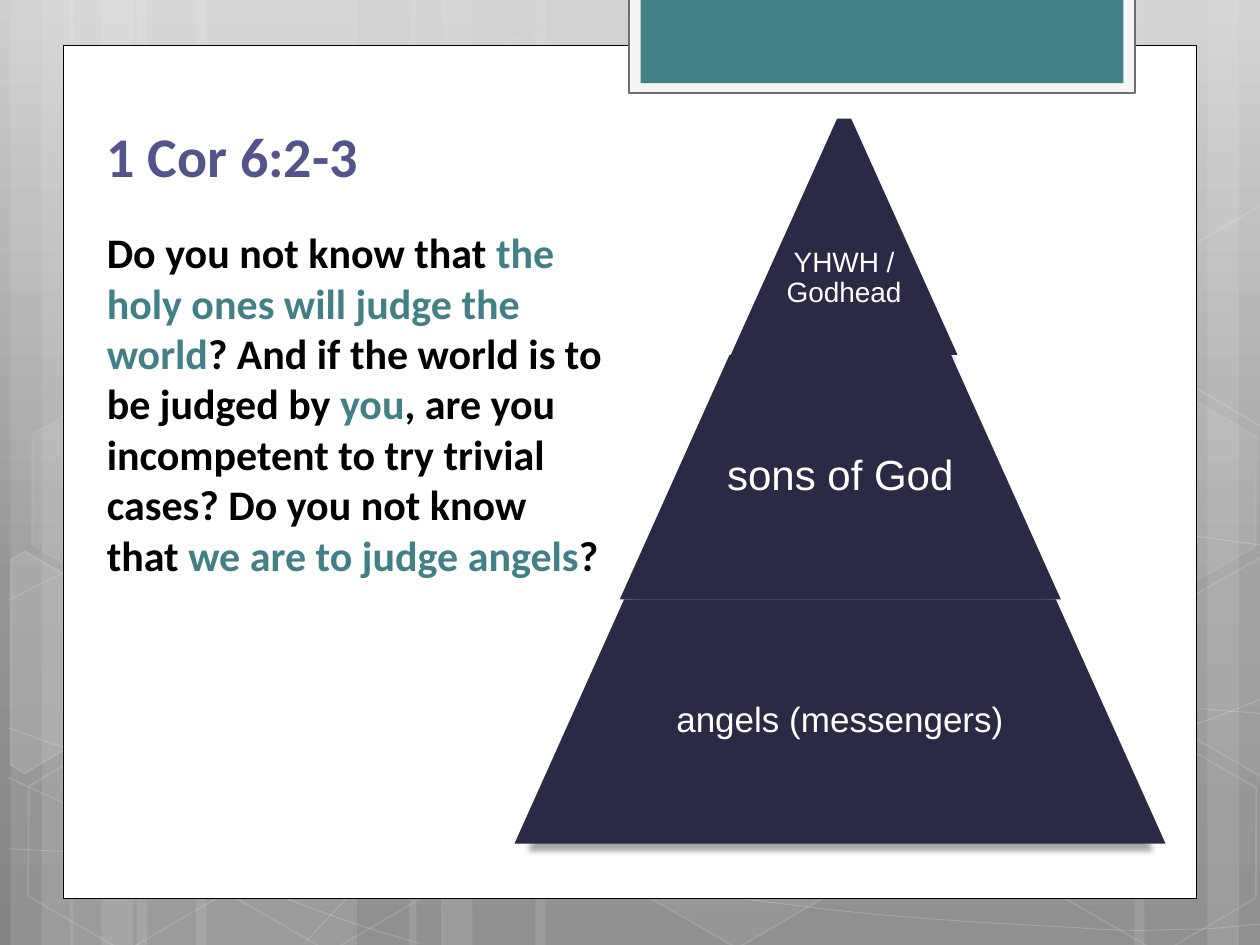
from math import cos, radians, sin

from lxml import etree
from pptx import Presentation
from pptx.dml.color import RGBColor
from pptx.enum.shapes import MSO_SHAPE
from pptx.enum.text import MSO_ANCHOR, MSO_AUTO_SIZE, PP_ALIGN
from pptx.oxml.ns import qn
from pptx.util import Pt

RECTANGLE, HEXAGON, TRAPEZOID = MSO_SHAPE.RECTANGLE, MSO_SHAPE.HEXAGON, MSO_SHAPE.TRAPEZOID
TOP, MIDDLE = MSO_ANCHOR.TOP, MSO_ANCHOR.MIDDLE
LEFT, CENTER = PP_ALIGN.LEFT, PP_ALIGN.CENTER
NO_AUTOFIT = MSO_AUTO_SIZE.NONE

WIDTH, HEIGHT = 720, 540
HEXAGON_TURN = 30
THEME = {
    "text_font": "Calibri", "tier_font": "Arial",
    "title_size": 32, "body_size": 24,
    "title": "53548A", "body": "000000", "accent": "438086",
    "white": "FFFFFF", "tier": "2A2A45", "tab": "F5F5F5", "tab_line": "6F6F6F",
    "backdrop": [(0, "CFCFCF"), (62, "969696"), (100, "848484")],
}

TITLE = "1 Cor 6:2-3"
# (text, highlighted)
VERSE = [
    ("Do you not know that ", False),
    ("the holy ones will judge the world", True),
    ("? And if the world is to be judged by ", False),
    ("you", True),
    (", are you incompetent to try trivial cases? Do you not know that ", False),
    ("we are to judge angels", True),
    ("?", False),
]
# (text, size, left, top, width, height, slope, text centred on the full height)
TIERS = [
    ("YHWH /\vGodhead", 16, 417.6, 67.8, 129.6, 135, 0.469, False),
    ("sons of God", 24, 354.2, 202.8, 252, 139.7, 0.449, True),
    ("angels (messengers)", 20, 294, 342.5, 372, 139.5, 0.449, True),
]

# (left, width)
STRIPES = [(78, 126), (6, 36), (24, 60), (112, 126), (40, 36), (58, 60),
           (528, 126), (690, 36), (648, 60), (306, 222), (234, 36), (252, 60)]
# Each curve is a start point, then three Bezier points per segment
CURVES = [
    [(5, 485), (44, 487), (83, 489), (137, 488), (191, 487), (258, 486), (330, 479),
     (402, 472), (504, 458), (570, 444), (636, 431), (703, 409), (725, 397)],
    [(5, 343), (26, 332), (47, 321), (87, 310), (128, 300), (186, 284), (250, 279),
     (314, 274), (392, 273), (471, 279), (550, 285), (682, 307), (725, 312)],
    [(4, 444), (91, 484), (178, 523), (240, 539)],
    [(5, 416), (27, 424), (50, 432), (92, 444), (134, 454), (197, 472), (257, 485),
     (317, 497), (392, 510), (452, 517), (512, 525), (576, 528), (614, 530),
     (652, 533), (662, 531), (680, 531), (699, 531), (712, 528), (725, 528)],
    [(174, 539), (187, 525), (200, 510), (217, 498), (235, 486), (259, 470), (279, 460),
     (300, 450), (312, 446), (338, 438), (364, 431), (413, 421), (438, 416),
     (463, 411), (467, 411), (490, 410), (512, 408), (547, 405), (572, 405),
     (597, 404), (638, 405), (638, 405), (654, 405), (670, 405), (686, 405),
     (699, 406), (711, 407), (724, 408)],
]
# (left, top, fill opacity, line opacity)
HEXAGONS = [(240, 26, 4, 8), (358, 424, 6, 12), (8, 426, 0, 12), (10, 225, 7, 8),
            (125, 426, 0, 12), (542, 326, 10, 12), (600, 427, 0, 12), (600, 226, 7, 8)]
# (points, fill opacity)
CUT_HEXAGONS = [
    ([(6, 320), (14, 315), (69, 347), (68, 410), (14, 442), (6, 437)], 10),
    ([(667, 349), (721, 318), (726, 321), (726, 444), (721, 444), (667, 413)], 4),
    ([(667, 149), (721, 117), (727, 121), (726, 241), (721, 244), (667, 212)], 0),
]


def rgb(name):
    return RGBColor.from_string(THEME[name])


def set_opacity(shape, query, percent):
    for color in shape.element.spPr.xpath(query):
        etree.SubElement(color, qn("a:alpha")).set("val", str(percent * 1000))


def paint(shape, fill=None, fill_opacity=100, line=None, weight=1, line_opacity=100):
    shape.shadow.inherit = False
    if fill and fill_opacity:
        shape.fill.solid()
        shape.fill.fore_color.rgb = rgb(fill)
    else:
        shape.fill.background()
    if line:
        shape.line.color.rgb = rgb(line)
        shape.line.width = Pt(weight)
    else:
        shape.line.fill.background()
    set_opacity(shape, "a:solidFill/a:srgbClr", fill_opacity)
    set_opacity(shape, "a:ln/a:solidFill/a:srgbClr", line_opacity)


def add_preset(slide, preset, left, top, width, height):
    return slide.shapes.add_shape(preset, Pt(left), Pt(top), Pt(width), Pt(height))


def add_outline(slide, points, close):
    corners = [(Pt(x), Pt(y)) for x, y in points]
    builder = slide.shapes.build_freeform(*corners[0], scale=1.0)
    builder.add_line_segments(corners[1:], close=close)
    return builder.convert_to_shape()


def add_curve(slide, points):
    """Draw an open outline and merge every three of its lines into one Bezier."""
    curve = add_outline(slide, points, False)
    lines = curve.element.xpath(".//a:lnTo")
    for start in range(0, len(lines), 3):
        bezier = etree.Element(qn("a:cubicBezTo"))
        lines[start].addprevious(bezier)
        for line in lines[start:start + 3]:
            bezier.append(line[0])
            line.getparent().remove(line)
    return curve


def turn(point, degrees):
    x, y = point
    angle = radians(degrees)
    return x * cos(angle) - y * sin(angle), x * sin(angle) + y * cos(angle)


def add_turned_outline(slide, points, degrees):
    """Draw a closed outline whose rotated points land on the given ones."""
    upright = [turn(point, -degrees) for point in points]
    middle = [(min(values) + max(values)) / 2 for values in zip(*upright)]
    shift = [after - before for after, before in zip(turn(middle, degrees), middle)]
    outline = add_outline(slide, [(x + shift[0], y + shift[1]) for x, y in upright], True)
    outline.rotation = degrees
    return outline


def add_backdrop(slide):
    fill = slide.background.fill
    fill.gradient()
    fill.gradient_angle = 270
    stops = slide.element.xpath(".//p:bg//a:gsLst")[0]
    for stop in list(stops):
        stops.remove(stop)
    for position, color in THEME["backdrop"]:
        stop = etree.SubElement(stops, qn("a:gs"), pos=str(position * 1000))
        etree.SubElement(stop, qn("a:srgbClr"), val=color)
    for left, width in STRIPES:
        paint(add_preset(slide, RECTANGLE, left, 0, width, HEIGHT), "white", 10)
    for points in CURVES:
        paint(add_curve(slide, points), line="white", weight=0.5, line_opacity=20)
    for left, top, fill_opacity, line_opacity in HEXAGONS:
        hexagon = add_preset(slide, HEXAGON, left, top, 126, 109.4)
        hexagon.adjustments[0] = 0.285
        hexagon.rotation = HEXAGON_TURN
        paint(hexagon, "white", fill_opacity, "white", 1, line_opacity)
    for points, fill_opacity in CUT_HEXAGONS:
        outline = add_turned_outline(slide, points, HEXAGON_TURN)
        paint(outline, "white", fill_opacity, "white", 1, 12)


def add_panel(slide):
    paint(add_preset(slide, RECTANGLE, 36, 26, 648, 487.2), "white", line="body", weight=0.5)
    paint(add_preset(slide, RECTANGLE, 359.2, -1.5, 289.4, 54.7), "tab",
          line="tab_line", weight=1.25)
    paint(add_preset(slide, RECTANGLE, 366, -1.5, 276, 49), "accent")


def set_font(font, name, size, color, bold=False):
    font.name, font.size, font.bold = name, Pt(size), bold
    font.color.rgb = rgb(color)


def add_tier(slide, text, size, left, top, width, height, slope, centred):
    tier = add_preset(slide, TRAPEZOID, left, top, width, height)
    tier.adjustments[0] = slope
    paint(tier, "tier")
    effects = tier.element.spPr.find(qn("a:effectLst"))
    shadow = etree.SubElement(effects, qn("a:outerShdw"), blurRad=str(Pt(3.5)),
                              dist=str(Pt(4)), dir="5400000", sx="96000", rotWithShape="0")
    color = etree.SubElement(shadow, qn("a:srgbClr"), val="000000")
    etree.SubElement(color, qn("a:alpha"), val="34000")

    frame = tier.text_frame
    frame.word_wrap = False
    frame.vertical_anchor = MIDDLE
    frame.margin_left = frame.margin_right = 0
    # A trapezoid's text area starts below its top; an equal bottom margin centres it
    text_top = height / 3 * slope * 2 * min(width, height) / width
    frame.margin_top = Pt(0 if centred else 5.7)
    frame.margin_bottom = Pt(text_top if centred else 0)
    para = frame.paragraphs[0]
    para.text = text
    para.alignment = CENTER
    para.line_spacing = 0.9
    set_font(para.font, THEME["tier_font"], size, "white")


def place_text(slide, box, top, height):
    """Move a placeholder in front of the panel and return its bare paragraph."""
    slide.shapes.element.append(box.element)
    box.left, box.top, box.width, box.height = Pt(53.8), Pt(top), Pt(300), Pt(height)
    frame = box.text_frame
    frame.word_wrap = True
    frame.auto_size = NO_AUTOFIT
    frame.vertical_anchor = TOP
    para = frame.paragraphs[0]
    para.alignment = LEFT
    para.space_before = Pt(0)
    properties = para._p.get_or_add_pPr()
    properties.set("marL", "0")
    properties.set("indent", "0")
    etree.SubElement(properties, qn("a:buNone"))
    return para


def add_verse(slide):
    title, body = slide.placeholders
    para = place_text(slide, title, 65.7, 50)
    para.text = TITLE
    set_font(para.font, THEME["text_font"], THEME["title_size"], "title", True)
    para = place_text(slide, body, 125.9, 270)
    set_font(para.font, THEME["text_font"], THEME["body_size"], "body", True)
    for text, highlighted in VERSE:
        span = para.add_run()
        span.text = text
        if highlighted:
            span.font.color.rgb = rgb("accent")


def main():
    deck = Presentation()
    deck.slide_width, deck.slide_height = Pt(WIDTH), Pt(HEIGHT)
    slide = deck.slides.add_slide(deck.slide_layouts[1])
    add_backdrop(slide)
    add_panel(slide)
    for tier in TIERS:
        add_tier(slide, *tier)
    add_verse(slide)
    deck.save("out.pptx")


if __name__ == "__main__":
    main()
